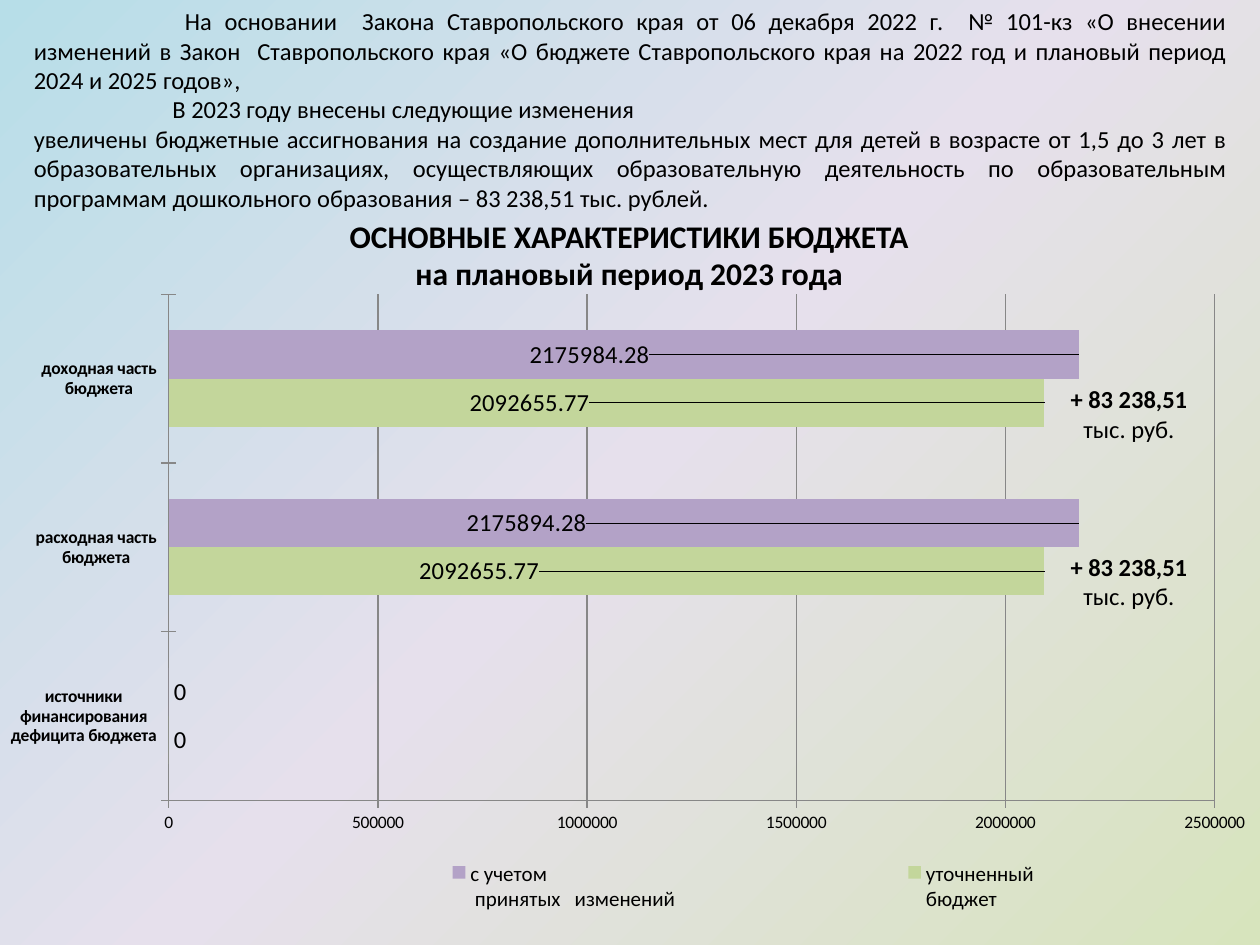
from lxml.etree import fromstring
from pptx import Presentation
from pptx.chart.data import CategoryChartData
from pptx.dml.color import RGBColor
from pptx.enum.chart import XL_CHART_TYPE, XL_LABEL_POSITION, XL_LEGEND_POSITION, XL_TICK_MARK
from pptx.enum.text import PP_ALIGN
from pptx.oxml.ns import nsdecls
from pptx.util import Inches, Pt

rgb = RGBColor.from_string


def layout(**parts):
    inner = "".join(f'<c:{k} val="{v}"/>' for k, v in parts.items())
    return fromstring(f'<c:layout {nsdecls("c")}><c:manualLayout>{inner}</c:manualLayout></c:layout>')


prs = Presentation()
prs.slide_width, prs.slide_height = Inches(10), Inches(7.5)
s = prs.slides.add_slide(prs.slide_layouts[6])

s.background.fill.solid()
stops = "".join(f'<a:gs pos="{pos}"><a:srgbClr val="{c}"/></a:gs>'
                for pos, c in ((0, "D7E4BD"), (50000, "E6E0EC"), (100000, "B7DEE8")))
solid = s.background._cSld.find(".//{*}bgPr/{*}solidFill")
solid.getparent().replace(solid, fromstring(
    f'<a:gradFill {nsdecls("a")} rotWithShape="1"><a:gsLst>{stops}</a:gsLst>'
    '<a:path path="circle"><a:fillToRect l="100000" t="100000"/></a:path></a:gradFill>'))

cd = CategoryChartData()
cd.categories = ["источники финансирования дефицита бюджета", "расходная часть бюджета",
                 "доходная часть бюджета"]
cd.add_series("уточненный\nбюджет\n", (0, 2092655.77, 2092655.77))
cd.add_series("с учетом \n принятых   изменений\n", (0, 2175894.28, 2175984.28))
chart = s.shapes.add_chart(XL_CHART_TYPE.BAR_CLUSTERED, 0, Inches(2.33),
                           Inches(10), Inches(5.17), cd).chart
chart.has_title = False
chart.font.name, chart.font.size = "Calibri", Pt(18)
chart.font.color.rgb = rgb("000000")

area = chart._chartSpace.chart.plotArea
for old in area.findall("{*}layout"):
    area.remove(old)
area.insert(0, layout(layoutTarget="inner", xMode="edge", yMode="edge", x=0.134, y=0, w=0.83, h=0.778))

for axis, bold in ((chart.category_axis, True), (chart.value_axis, False)):
    axis.major_tick_mark = XL_TICK_MARK.CROSS
    axis.tick_labels.font.size = Pt(10)
    axis.tick_labels.font.bold = bold
    axis.format.line.color.rgb = rgb("878787")
axis.has_major_gridlines = True
axis.major_gridlines.format.line.color.rgb = rgb("878787")
axis.minimum_scale, axis.maximum_scale, axis.major_unit = 0, 2500000, 500000
axis.tick_labels.number_format = "General"
axis.tick_labels.number_format_is_linked = False

plot = chart.plots[0]
plot.gap_width, plot.overlap, plot.vary_by_categories = 150, 0, False
looks = (("C3D69B", {1: -0.5, 2: -0.46}), ("B3A2C7", {1: -0.49, 2: -0.44}))
for ser, (color, shifts) in zip(plot.series, looks):
    ser.format.fill.solid()
    ser.format.fill.fore_color.rgb = rgb(color)
    ser.data_labels.show_value = True
    ser.data_labels.font.size = Pt(14)
    ser.data_labels.position = XL_LABEL_POSITION.OUTSIDE_END
    for i, dx in shifts.items():
        label = ser.points[i].data_label
        label.font.size = Pt(14)
        label.position = XL_LABEL_POSITION.OUTSIDE_END
    for lbl, dx in zip(ser._element.findall(".//{*}dLbl"), shifts.values()):
        lbl.insert(1, layout(x=dx, y=0))

chart.has_legend = True
legend = chart.legend
legend.position = XL_LEGEND_POSITION.RIGHT
legend.include_in_layout = False
legend.font.size, legend.font.name = Pt(12), "Calibri"
legend._element.find("{*}legendPos").addnext(
    layout(xMode="edge", yMode="edge", x=0.18, y=0.86, w=0.82, h=0.14))

change = [("+ 83 238,51", 14, True, 0), ("тыс. руб.", 14, False, 0)]
boxes = [
    ((0.17, 0, 9.67, 1.99), PP_ALIGN.JUSTIFY, [
        ("На основании  Закона Ставропольского края от 06 декабря 2022 г.  № 101-кз «О внесении "
         "изменений в Закон  Ставропольского края «О бюджете Ставропольского края на 2022 год "
         "и плановый период 2024 и 2025 годов»,", 14, False, 1.2),
        ("В 2023 году внесены следующие изменения", 14, False, 1.1),
        ("увеличены бюджетные ассигнования на создание дополнительных мест для детей в возрасте "
         "от 1,5 до 3 лет в образовательных организациях, осуществляющих образовательную "
         "деятельность по образовательным программам дошкольного образования – "
         "83 238,51 тыс. рублей.", 14, False, 0)]),
    ((0.33, 1.67, 9.33, 0.71), PP_ALIGN.CENTER, [
        ("ОСНОВНЫЕ ХАРАКТЕРИСТИКИ БЮДЖЕТА", 18, True, 0),
        ("на плановый период 2023 года", 18, True, 0)]),
    ((8.25, 3, 1.42, 0.57), PP_ALIGN.CENTER, change),
    ((8.25, 4.33, 1.42, 0.57), PP_ALIGN.CENTER, change),
]
for box, align, paras in boxes:
    tf = s.shapes.add_textbox(*map(Inches, box)).text_frame
    tf.word_wrap = True
    for i, (text, size, bold, indent) in enumerate(paras):
        p = tf.add_paragraph() if i else tf.paragraphs[0]
        p.alignment = align
        if indent:
            p._p.get_or_add_pPr().set("indent", str(Inches(indent)))
        r = p.add_run()
        r.text = text
        for key, value in {"name": "Calibri", "size": Pt(size), "bold": bold}.items():
            setattr(r.font, key, value)
        r.font.color.rgb = rgb("000000")

prs.save("out.pptx")
